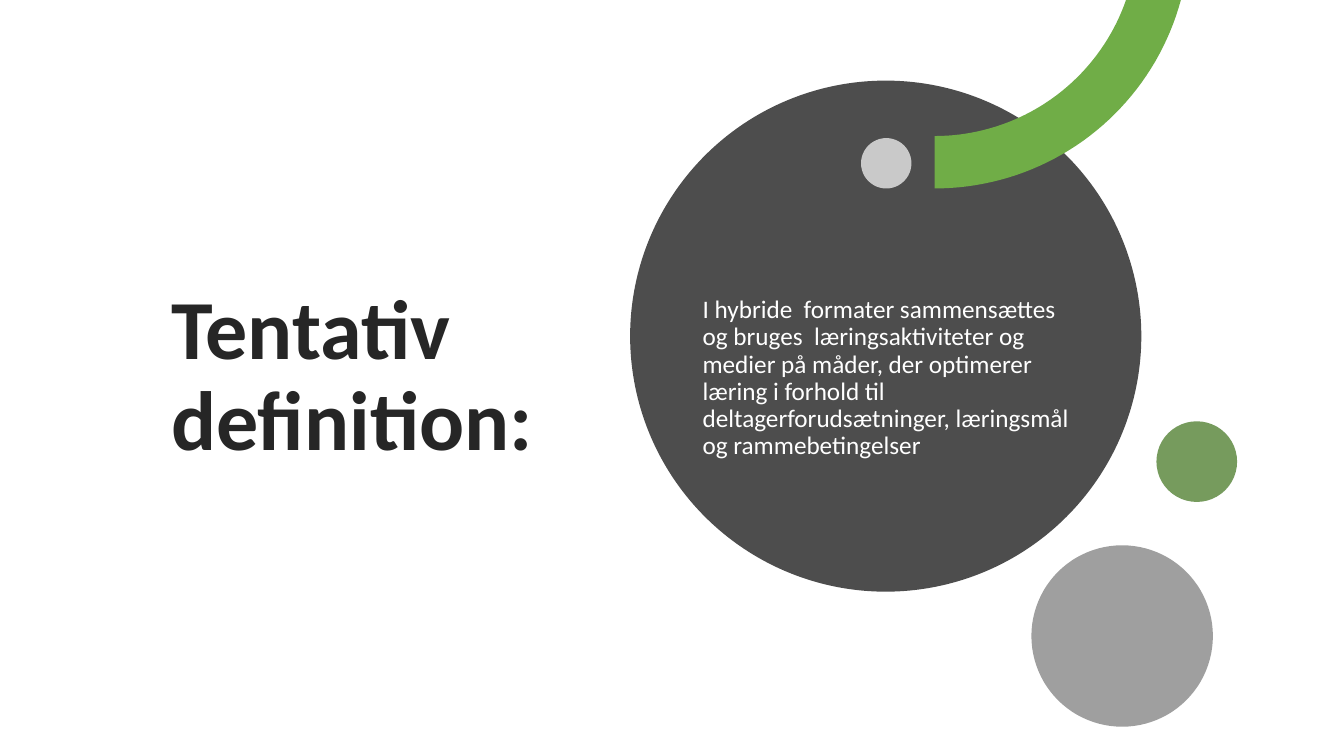
from dataclasses import dataclass
from math import asin, cos, pi, sin

from lxml.etree import SubElement
from pptx import Presentation
from pptx.dml.color import RGBColor
from pptx.enum.shapes import MSO_SHAPE as Shape
from pptx.enum.text import MSO_ANCHOR as Anchor
from pptx.oxml.ns import qn
from pptx.util import Inches, Pt


@dataclass(frozen=True)
class Theme:
    font: str = "Calibri"
    title_size: int = 60
    body_size: int = 18
    title: str = "262626"
    white: str = "FFFFFF"
    disc: str = "4D4D4D"
    arc: str = "70AD47"
    green: str = "548235"
    gray: str = "404040"


THEME = Theme()


def paint(shape, color, opacity=100):
    shape.shadow.inherit = False
    shape.fill.solid()
    shape.fill.fore_color.rgb = RGBColor.from_string(color)
    shape.line.fill.background()
    if opacity < 100:
        tint = shape.fill._xPr.find(".//" + qn("a:srgbClr"))
        SubElement(tint, qn("a:alpha")).set("val", str(opacity * 1000))


def add_circle(page, left, top, size, color, opacity=100):
    circle = page.shapes.add_shape(
        Shape.OVAL, Inches(left), Inches(top), Inches(size), Inches(size))
    paint(circle, color, opacity)


def add_arc(page, center_x, center_y, inner, outer, color, steps=40):
    def curve(radius):
        start = asin(-center_y / radius)
        angles = [start + (pi / 2 - start) * i / steps for i in range(steps + 1)]
        return [(Inches(center_x + radius * cos(angle)),
                 Inches(center_y + radius * sin(angle))) for angle in angles]

    points = curve(outer) + curve(inner)[::-1]
    builder = page.shapes.build_freeform(*points[0])
    builder.add_line_segments(points[1:], close=True)
    paint(builder.convert_to_shape(), color)


def add_text(page, box, text, size, color, bold=False, space_before=0):
    frame = page.shapes.add_textbox(*map(Inches, box)).text_frame
    frame.word_wrap = True
    frame.vertical_anchor = Anchor.MIDDLE
    para = frame.paragraphs[0]
    para.text = text
    para.line_spacing = 0.9
    para.space_before = Pt(space_before)
    font = para.runs[0].font
    font.name = THEME.font
    font.size = Pt(size)
    font.bold = bold
    font.color.rgb = RGBColor.from_string(color)


def add_title(page, box):
    add_text(page, box, "Tentativ definition:", THEME.title_size, THEME.title, bold=True)


def add_definition(page, box):
    left, top, width, height = box
    add_circle(page, left, top, width, THEME.disc)
    add_circle(page, left + 2.29, top + 0.57, 0.5, THEME.white, 70)
    add_arc(page, left + 3.02, -0.66, 2.01, 2.53, THEME.arc)
    add_text(page, (left + 0.62, top + 1.13, width - 1.15, height - 1.42),
             "I hybride  formater sammensættes og bruges  læringsaktiviteter og "
             "medier på måder, der optimerer læring i forhold til "
             "deltagerforudsætninger, læringsmål og rammebetingelser",
             THEME.body_size, THEME.white, space_before=10)


def add_bubbles(page, box):
    left, top, width, height = box
    add_circle(page, left + width - 0.8, top, 0.8, THEME.green, 80)
    add_circle(page, left, top + height - 1.8, 1.8, THEME.gray, 50)


def main():
    deck = Presentation()
    deck.slide_width = Inches(13.33)
    deck.slide_height = Inches(7.5)
    page = deck.slides.add_slide(deck.slide_layouts[6])
    add_title(page, (1.6, 1.19, 4.16, 5.11))
    add_definition(page, (6.25, 0.8, 5.07, 5.07))
    add_bubbles(page, (10.23, 4.18, 2.04, 3.03))
    deck.save("out.pptx")


if __name__ == "__main__":
    main()
